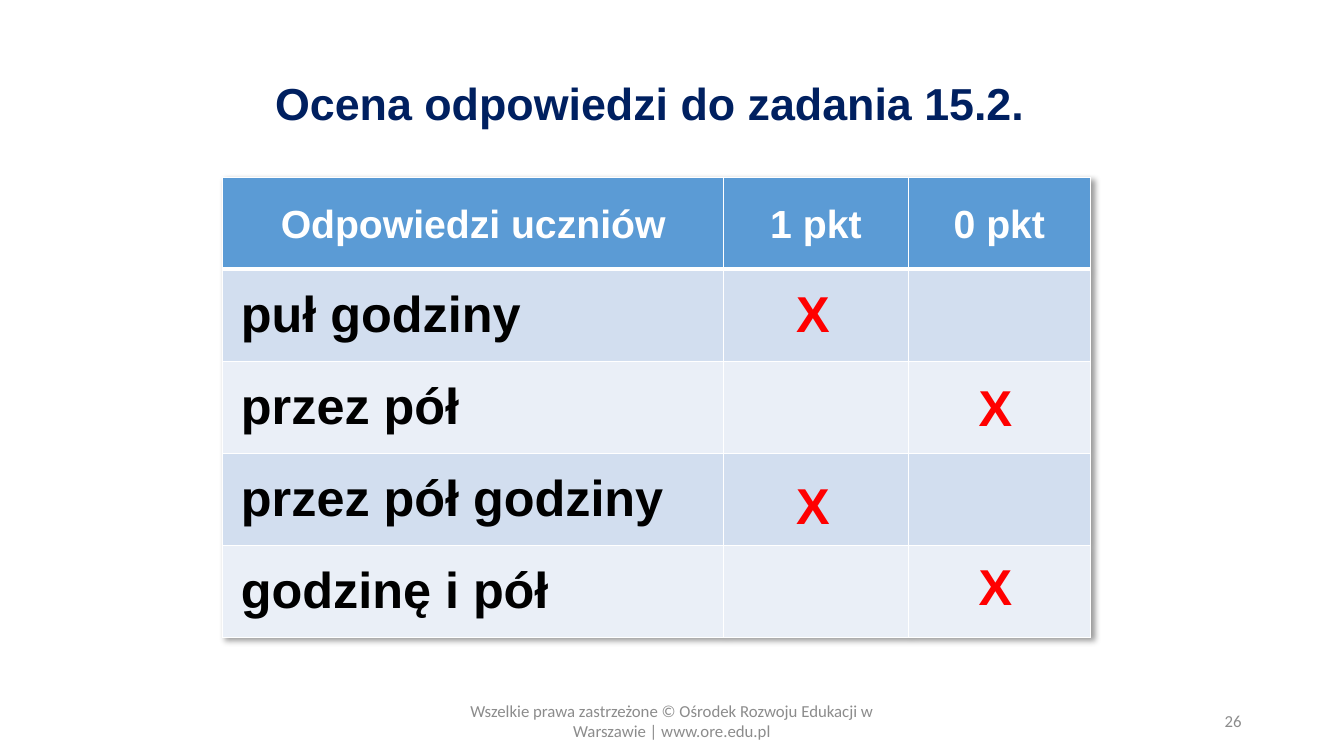
from lxml import etree
from pptx import Presentation
from pptx.dml.color import RGBColor
from pptx.enum import text
from pptx.oxml import parse_xml
from pptx.util import Pt

NAVY = RGBColor(0x00, 0x20, 0x60)
GREY = RGBColor(0x8C, 0x8C, 0x8C)
WHITE = RGBColor(0xFF, 0xFF, 0xFF)
BLACK = RGBColor(0x00, 0x00, 0x00)
RED = RGBColor(0xFF, 0x00, 0x00)
BLUE = RGBColor(0x5B, 0x9B, 0xD5)
BANDS = [RGBColor(0xD2, 0xDE, 0xEF), RGBColor(0xEA, 0xEF, 0xF7)]
DRAWING = "http://schemas.openxmlformats.org/drawingml/2006/main"

LEFT, CENTER, RIGHT = text.PP_ALIGN.LEFT, text.PP_ALIGN.CENTER, text.PP_ALIGN.RIGHT
TOP, MIDDLE = text.MSO_ANCHOR.TOP, text.MSO_ANCHOR.MIDDLE

TITLE = "Ocena odpowiedzi do zadania 15.2."
FOOTER = "Wszelkie prawa zastrzeżone © Ośrodek Rozwoju Edukacji w Warszawie | www.ore.edu.pl"
PAGE_NUMBER = "26"
HEADERS = ["Odpowiedzi uczniów", "1 pkt", "0 pkt"]
ANSWERS = ["puł godziny", "przez pół", "przez pół godziny", "godzinę i pół"]
MARKS = [(561.6, 198), (691.9, 265), (561.6, 334.8), (691.9, 393.1)]
TABLE_LEFT, TABLE_TOP = 159.1, 126.7
COLUMN_WIDTHS = [357.8, 131.8, 130.3]
ROW_HEIGHT = 65.7


def write(frame, words, size, color, align=LEFT, font="Arial", bold=True, spacing=None):
    para = frame.paragraphs[0]
    para.text = words
    para.alignment = align
    if spacing:
        para.line_spacing = spacing
    span = para.runs[0]
    span.font.name = font
    span.font.size = Pt(size)
    span.font.bold = bold
    span.font.color.rgb = color


def add_text(page, area, words, size, color, anchor=MIDDLE, **style):
    box = page.shapes.add_textbox(*map(Pt, area))
    box.text_frame.word_wrap = True
    box.text_frame.vertical_anchor = anchor
    write(box.text_frame, words, size, color, **style)


def set_borders(cell, row):
    widths = {"lnL": 1, "lnR": 1, "lnT": 3 if row == 1 else 1, "lnB": 3 if row == 0 else 1}
    properties = cell._tc.get_or_add_tcPr()
    for index, (side, width) in enumerate(widths.items()):
        line = etree.Element(f"{{{DRAWING}}}{side}", w=str(Pt(width)))
        fill = etree.SubElement(line, f"{{{DRAWING}}}solidFill")
        etree.SubElement(fill, f"{{{DRAWING}}}srgbClr", val=str(WHITE))
        properties.insert(index, line)


def add_answers(page):
    rows = len(ANSWERS) + 1
    area = (TABLE_LEFT, TABLE_TOP, sum(COLUMN_WIDTHS), rows * ROW_HEIGHT)
    table = page.shapes.add_table(rows, len(HEADERS), *map(Pt, area)).table
    for column, width in zip(table.columns, COLUMN_WIDTHS):
        column.width = Pt(width)
    for row in range(rows):
        table.rows[row].height = Pt(ROW_HEIGHT)
        for column, header in enumerate(HEADERS):
            cell = table.cell(row, column)
            cell.vertical_anchor = MIDDLE
            cell.fill.solid()
            cell.fill.fore_color.rgb = BANDS[(row - 1) % 2] if row else BLUE
            set_borders(cell, row)
            if row == 0:
                cell.margin_left = cell.margin_right = Pt(5)
                cell.margin_top = cell.margin_bottom = Pt(0)
                write(cell.text_frame, header, 28, WHITE, align=CENTER, spacing=1.07)
            elif column == 0:
                write(cell.text_frame, ANSWERS[row - 1], 36, BLACK)
                cell.text_frame.paragraphs[0]._p.get_or_add_pPr().set("marL", str(Pt(5.8)))
    shadow = parse_xml(
        f'<a:effectLst xmlns:a="{DRAWING}"><a:outerShdw blurRad="50800" dist="38100" '
        'dir="2700000" algn="tl" rotWithShape="0"><a:srgbClr val="000000">'
        '<a:alpha val="40000"/></a:srgbClr></a:outerShdw></a:effectLst>')
    table._tbl.tblPr.insert(0, shadow)


def main():
    deck = Presentation()
    deck.slide_width, deck.slide_height = Pt(960), Pt(540)
    page = deck.slides.add_slide(deck.slide_layouts[6])
    add_text(page, (189.4, 23.8, 558.7, 104.4), TITLE, 32, NAVY, spacing=0.9)
    add_text(page, (318, 500.5, 324, 28.75), FOOTER, 12, GREY,
             align=CENTER, font="Calibri", bold=False)
    add_text(page, (678, 500.5, 216, 28.75), PAGE_NUMBER, 12, GREY,
             align=RIGHT, font="Calibri", bold=False)
    add_answers(page)
    for left, top in MARKS:
        add_text(page, (left, top, 36, 51), "X", 36, RED, anchor=TOP)
    deck.save("out.pptx")


if __name__ == "__main__":
    main()
